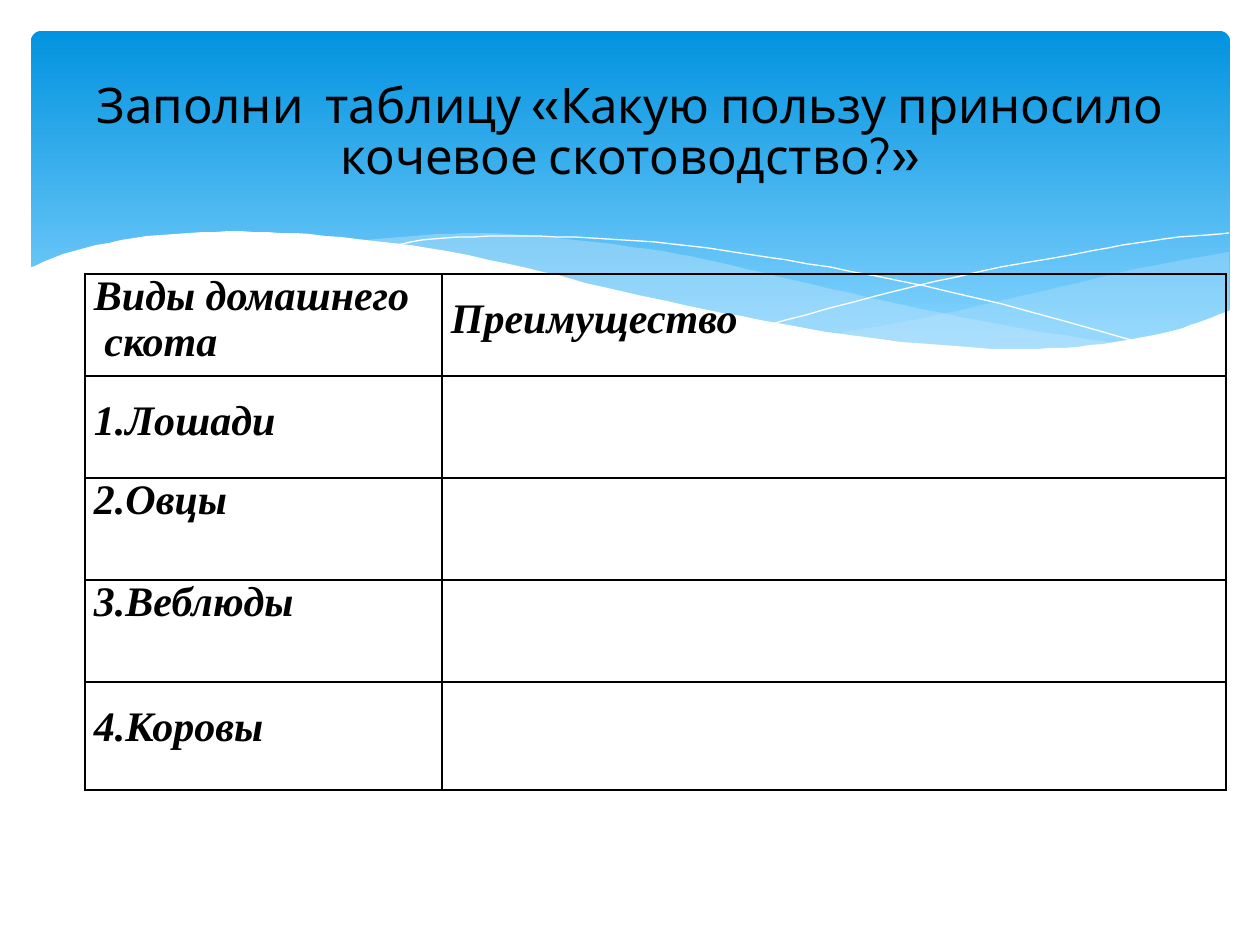
from lxml.etree import SubElement
from pptx import Presentation
from pptx.dml.color import RGBColor
from pptx.enum.shapes import MSO_SHAPE as Preset
from pptx.enum.text import MSO_ANCHOR as Anchor, PP_ALIGN as Align
from pptx.oxml.ns import qn
from pptx.util import Pt

SCALE = 914400 / 126
BLACK = RGBColor(0x00, 0x00, 0x00)
WHITE = RGBColor(0xFF, 0xFF, 0xFF)
DEEP_BLUE = RGBColor(0x02, 0x93, 0xE0)
SKY_BLUE = RGBColor(0x83, 0xD3, 0xFE)
PALE_BLUE = RGBColor(0xC6, 0xE7, 0xFC)

RIGHT_WAVE_TOP = [(1229, 252), (1178, 261), (1123, 272), (1048, 290), (982, 305),
                  (919, 319), (833, 334)]
RIGHT_WAVE_BOTTOM = [(833, 334), (888, 341), (954, 348), (1012, 350), (1076, 348),
                     (1130, 340), (1178, 330), (1229, 311)]
MIDDLE_WAVE_TOP = [(1125, 344), (1055, 334), (977, 320), (890, 302), (793, 280),
                   (717, 262), (648, 249), (557, 238), (479, 233), (413, 236), (360, 241)]
MIDDLE_WAVE_BOTTOM = [(360, 241), (431, 251), (509, 266), (566, 280), (668, 302),
                      (757, 321), (838, 335), (910, 345), (989, 350), (1056, 350), (1125, 344)]
FALLING_LINE = [(389, 246), (433, 239), (505, 236), (591, 238), (672, 244), (766, 257),
                (876, 276), (1002, 304), (1143, 343)]
RISING_LINE = [(772, 324), (876, 296), (978, 272), (1091, 251), (1164, 239), (1229, 233)]
FRONT_WAVE = [(29, 268), (74, 251), (134, 238), (203, 232), (266, 232), (341, 237),
              (428, 248), (527, 268), (599, 286), (667, 301), (760, 320), (842, 334),
              (915, 343), (980, 348), (1037, 349), (1103, 344), (1159, 334), (1197, 323),
              (1231, 310)]
FRONT_WAVE_BASE = [(1231, 415), (29, 415)]

ROWS = [
    [(23, ["Виды домашнего", " скота"]), (46, ["Преимущество"])],
    [(46, ["1.Лошади"])],
    [(23, ["2.Овцы"])],
    [(23, ["3.Веблюды"])],
    [(46, ["4.Коровы"])],
]


def px(length):
    return round(length * SCALE)


def apply(target, values):
    for name, value in values.items():
        setattr(target, name, value)


def smooth(knots, steps=5):
    padded = [knots[0], *knots, knots[-1]]
    points = [knots[0]]
    for a, b, c, d in zip(padded, padded[1:], padded[2:], padded[3:]):
        for step in range(1, steps + 1):
            t = step / steps
            points.append(tuple(
                (2 * q + (r - p) * t + (2 * p - 5 * q + 4 * r - s) * t ** 2
                 + (3 * q - p - 3 * r + s) * t ** 3) / 2
                for p, q, r, s in zip(a, b, c, d)))
    return points


class WaveSlide:
    title_font = {"name": "Cabin", "size": Pt(28), "bold": False}
    cell_font = {"name": "Times New Roman", "size": Pt(24), "bold": True, "italic": True}
    cell_margins = {"margin_left": px(9), "margin_right": px(9), "margin_bottom": 0}
    line_pitch = Pt(13)

    def __init__(self, presentation):
        self.slide = presentation.slides.add_slide(presentation.slide_layouts[5])
        self.shapes = self.slide.shapes

    def banner(self, left, top, width, height):
        banner = self.shapes.add_shape(
            Preset.ROUNDED_RECTANGLE, px(left), px(top), px(width), px(height))
        banner.adjustments[0] = 0.03
        banner.shadow.inherit = False
        banner.line.fill.background()
        banner.fill.gradient()
        banner.fill.gradient_angle = 270
        stops = banner.fill.gradient_stops
        for stop, position, color in zip(stops, (0, 0.9), (DEEP_BLUE, SKY_BLUE)):
            stop.position = position
            stop.color.rgb = color

    def outline(self, points, close):
        builder = self.shapes.build_freeform(*points[0], scale=SCALE)
        builder.add_line_segments(points[1:], close=close)
        outline = builder.convert_to_shape()
        outline.shadow.inherit = False
        return outline

    def wave(self, points, color, opacity=100):
        wave = self.outline(points, True)
        wave.line.fill.background()
        wave.fill.solid()
        wave.fill.fore_color.rgb = color
        if opacity < 100:
            tint = wave.fill._xPr.find(".//" + qn("a:srgbClr"))
            SubElement(tint, qn("a:alpha"), val=str(opacity * 1000))

    def thread(self, knots):
        thread = self.outline(smooth(knots), False)
        thread.fill.background()
        thread.line.color.rgb = WHITE
        thread.line.width = 0

    def title(self, wording, left, top, width, height):
        title = self.shapes.title
        self.shapes._spTree.append(title._element)
        apply(title, {"left": px(left), "top": px(top), "width": px(width),
                      "height": px(height)})
        title.text_frame.text = wording
        apply(title.text_frame, {"word_wrap": True, "vertical_anchor": Anchor.MIDDLE})
        paragraph = title.text_frame.paragraphs[0]
        apply(paragraph, {"alignment": Align.CENTER, "line_spacing": 0.87})
        apply(paragraph.runs[0].font, self.title_font)
        paragraph.runs[0].font.color.rgb = BLACK

    def border(self, cell):
        properties = cell._tc.get_or_add_tcPr()
        for place, side in enumerate(("a:lnL", "a:lnR", "a:lnT", "a:lnB")):
            edge = SubElement(properties, qn(side), w=str(Pt(1)))
            properties.insert(place, edge)
            fill = SubElement(edge, qn("a:solidFill"))
            SubElement(fill, qn("a:srgbClr"), val=str(BLACK))

    def cell_text(self, cell, top, lines):
        cell.margin_top = px(top)
        cell.text = "\n".join(lines)
        for index, paragraph in enumerate(cell.text_frame.paragraphs):
            apply(paragraph, {"alignment": Align.JUSTIFY, "line_spacing": self.line_pitch})
            if index:
                paragraph.space_before = self.line_pitch
            apply(paragraph.runs[0].font, self.cell_font)
            paragraph.runs[0].font.color.rgb = BLACK

    def table(self, rows, left, top, widths, heights):
        table = self.shapes.add_table(
            len(rows), len(widths), px(left), px(top),
            px(sum(widths)), px(sum(heights))).table
        apply(table, {"first_row": False, "horz_banding": False})
        for column, width in zip(table.columns, widths):
            column.width = px(width)
        for row, height in zip(table.rows, heights):
            row.height = px(height)
        for cell in table.iter_cells():
            apply(cell, self.cell_margins)
            cell.fill.background()
            self.border(cell)
        for row, entries in zip(table.rows, rows):
            for cell, (offset, lines) in zip(row.cells, entries):
                self.cell_text(cell, offset, lines)


def main():
    presentation = Presentation()
    apply(presentation, {"slide_width": px(1260), "slide_height": px(945)})
    page = WaveSlide(presentation)
    page.banner(31, 31, 1199, 340)
    page.wave(smooth(RIGHT_WAVE_TOP) + smooth(RIGHT_WAVE_BOTTOM), PALE_BLUE, 29)
    page.wave(smooth(MIDDLE_WAVE_TOP) + smooth(MIDDLE_WAVE_BOTTOM), PALE_BLUE, 40)
    page.thread(FALLING_LINE)
    page.thread(RISING_LINE)
    page.wave(smooth(FRONT_WAVE) + FRONT_WAVE_BASE, WHITE)
    page.table(ROWS, 85, 274, [357, 784], [102] * 4 + [108])
    page.title("Заполни  таблицу «Какую пользу приносило кочевое скотоводство?»",
               63, 47, 1134, 173)
    presentation.save("out.pptx")


if __name__ == "__main__":
    main()
